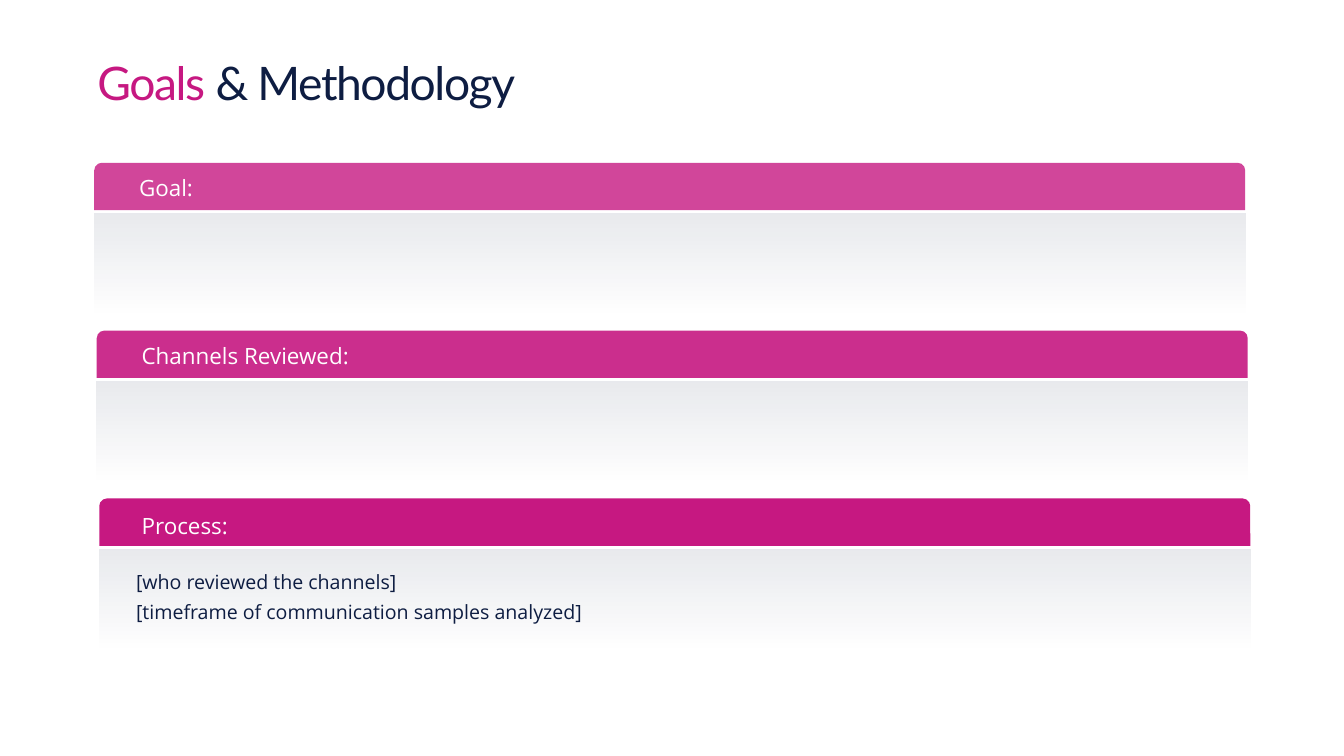
"""Build the Goals & Methodology slide with three titled panels."""
from dataclasses import dataclass
from typing import Any

import pptx
import pptx.dml.color
import pptx.enum.shapes
import pptx.enum.text
import pptx.oxml.ns
import pptx.util
from lxml import etree

Inches = pptx.util.Inches
Pt = pptx.util.Pt
RGBColor = pptx.dml.color.RGBColor
MSO_SHAPE = pptx.enum.shapes.MSO_SHAPE
MSO_ANCHOR = pptx.enum.text.MSO_ANCHOR
MSO_AUTO_SIZE = pptx.enum.text.MSO_AUTO_SIZE
PP_ALIGN = pptx.enum.text.PP_ALIGN
qn = pptx.oxml.ns.qn

MAGENTA = RGBColor(0xC6, 0x18, 0x81)
NAVY = RGBColor(0x0E, 0x1D, 0x42)
WHITE = RGBColor(0xFF, 0xFF, 0xFF)

WIDTH, HEADER_H, PANEL_H = 22.84, 0.94, 2.05
LEFT, TOP = 1.87, 3.23
STEP_X, STEP_Y = 0.05, 3.33
PANEL_DROP = 1.01


@dataclass
class Section:
    label: str
    opacity: int
    label_left: float
    label_top: float


SECTIONS = [
    Section("Goal:", 80, 2.7, 3.41),
    Section("Channels Reviewed:", 90, 2.75, 6.74),
    Section("Process:", 100, 2.75, 10.1),
]
PROCESS_NOTES = [
    "[who reviewed the channels]",
    "[timeframe of communication samples analyzed]",
]


def apply(obj: Any, formats: dict[str, Any]) -> None:
    for name, value in formats.items():
        setattr(obj, name, value)


def place(sp: Any, left: float, top: float, width: float, height: float) -> None:
    apply(sp, {"left": Inches(left), "top": Inches(top),
               "width": Inches(width), "height": Inches(height)})


def set_frame(tf: Any, inset: float, anchor: Any, auto_size: Any) -> None:
    margins = ("margin_left", "margin_top", "margin_right", "margin_bottom")
    apply(tf, {name: Inches(inset) for name in margins})
    apply(tf, {"word_wrap": True, "vertical_anchor": anchor, "auto_size": auto_size})


def add_run(p: Any, text: str, font: str, size: float, color: RGBColor) -> Any:
    r = p.add_run()
    r.text = text
    apply(r.font, {"name": font, "size": Pt(size)})
    r.font.color.rgb = color
    return r


def set_opacity(color: Any, percent: int) -> None:
    etree.SubElement(color, qn("a:alpha"), val=str(percent * 1000))


def add_block(s: Any, kind: Any, left: float, top: float, height: float) -> Any:
    sp = s.shapes.add_shape(kind, Inches(left), Inches(top), Inches(WIDTH), Inches(height))
    sp.shadow.inherit = False
    sp.line.fill.background()
    return sp


def add_panel(s: Any, left: float, top: float) -> None:
    sp = add_block(s, MSO_SHAPE.RECTANGLE, left, top, PANEL_H)
    sp.fill.gradient()
    sp.fill.gradient_angle = 270
    for stop in sp.fill.gradient_stops:
        stop.color.rgb = NAVY
    for color, percent in zip(sp._element.spPr.iter(qn("a:srgbClr")), (10, 0)):
        set_opacity(color, percent)


def add_header(s: Any, left: float, top: float, opacity: int) -> None:
    sp = add_block(s, MSO_SHAPE.ROUND_2_SAME_RECTANGLE, left, top, HEADER_H)
    sp.adjustments[0] = 0.16
    sp.fill.solid()
    sp.fill.fore_color.rgb = MAGENTA
    if opacity < 100:
        set_opacity(next(sp._element.spPr.iter(qn("a:srgbClr"))), opacity)


def add_section(s: Any, section: Section, index: int) -> None:
    left, top = LEFT + index * STEP_X, TOP + index * STEP_Y
    add_panel(s, left, top + PANEL_DROP)
    add_header(s, left, top, section.opacity)
    sp = s.shapes.add_textbox(Inches(section.label_left), Inches(section.label_top),
                              Inches(5.9), Inches(0.64))
    tf = sp.text_frame
    set_frame(tf, 0.06, MSO_ANCHOR.MIDDLE, MSO_AUTO_SIZE.SHAPE_TO_FIT_TEXT)
    add_run(tf.paragraphs[0], section.label, "Open Sans", 32, WHITE)


def fill_title(sp: Any) -> None:
    place(sp, 1.87, 1.24, 13.03, 1.26)
    tf = sp.text_frame
    set_frame(tf, 0.06, MSO_ANCHOR.TOP, MSO_AUTO_SIZE.NONE)
    p = tf.paragraphs[0]
    apply(p, {"alignment": PP_ALIGN.LEFT, "line_spacing": 0.8})
    for text, color in (("Goals ", MAGENTA), ("& Methodology", NAVY)):
        r = add_run(p, text, "Lato", 66, color)
        r._r.get_or_add_rPr().set("spc", "-200")


def fill_notes(sp: Any) -> None:
    place(sp, 2.7, 11.36, 9.8, 1.11)
    tf = sp.text_frame
    set_frame(tf, 0, MSO_ANCHOR.TOP, MSO_AUTO_SIZE.SHAPE_TO_FIT_TEXT)
    for i, text in enumerate(PROCESS_NOTES):
        p = tf.add_paragraph() if i else tf.paragraphs[0]
        apply(p, {"alignment": PP_ALIGN.LEFT, "space_before": Pt(12), "line_spacing": 0.9})
        pPr = p._p.get_or_add_pPr()
        apply_indent = {"marL": "0", "indent": "0"}
        for name, value in apply_indent.items():
            pPr.set(name, value)
        etree.SubElement(pPr, qn("a:buNone"))
        add_run(p, text, "Open Sans", 28, NAVY)


def main() -> None:
    prs = pptx.Presentation()
    apply(prs, {"slide_width": Inches(26.67), "slide_height": Inches(15)})
    s = prs.slides.add_slide(prs.slide_layouts[1])
    fill_title(s.shapes.title)
    for index, section in enumerate(SECTIONS):
        add_section(s, section, index)
    body = s.placeholders[1]
    fill_notes(body)
    s.shapes._spTree.append(body._element)
    prs.save("out.pptx")


if __name__ == "__main__":
    main()
